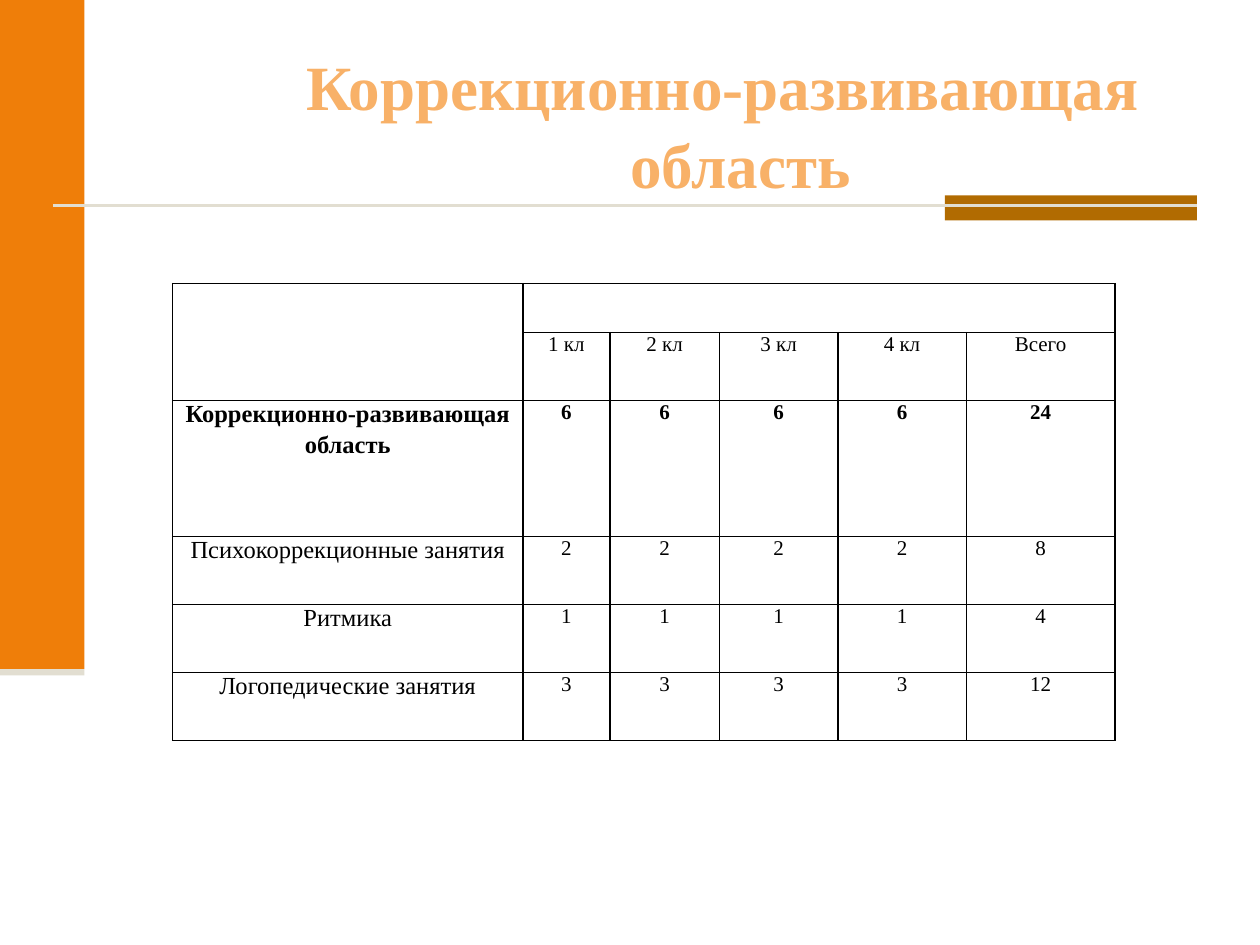
from dataclasses import dataclass

from lxml import etree
from pptx import Presentation
from pptx import util as u
from pptx.dml.color import RGBColor
from pptx.enum import shapes, text
from pptx.oxml import ns


@dataclass(frozen=True)
class Theme:
    font: str = "Times New Roman"
    orange: str = "EF7E09"
    brown: str = "B16B01"
    sand: str = "E2DED1"
    peach: str = "F8B168"
    ink: str = "000000"
    head: float = 36
    label: float = 14
    value: float = 12


THEME = Theme()
COLS = [2.78, 0.69, 0.87, 0.94, 1.02, 1.18]
ROWS = [0.39, 0.54, 1.08, 0.54, 0.54, 0.54]
HEADS = ["1 кл", "2 кл", "3 кл", "4 кл", "Всего"]
HOURS = [
    (["Коррекционно-развивающая", "область"], [6, 6, 6, 6, 24]),
    (["Психокоррекционные занятия"], [2, 2, 2, 2, 8]),
    (["Ритмика"], [1, 1, 1, 1, 4]),
    (["Логопедические занятия"], [3, 3, 3, 3, 12]),
]


def color(name):
    return RGBColor.from_string(name)


def add_run(para, words, size, tint, bold=False):
    run = para.add_run()
    run.text = words
    font = run.font
    font.name, font.size, font.bold = THEME.font, u.Pt(size), bold
    font.color.rgb = color(tint)


def add_bar(slide, box, tint):
    bar = slide.shapes.add_shape(
        shapes.MSO_SHAPE.RECTANGLE, *map(u.Inches, box))
    bar.shadow.inherit = False
    bar.fill.solid()
    bar.fill.fore_color.rgb = color(tint)
    bar.line.fill.background()


def add_side(slide, box):
    """Orange side band with a thin sand foot."""
    left, top, width, height = box
    foot = 0.05
    add_bar(slide, (left, top, width, height - foot), THEME.orange)
    add_bar(slide, (left, top + height - foot, width, foot), THEME.sand)


def add_rule(slide, box):
    """Brown block at the right end, crossed by a sand line."""
    left, top, width, height = box
    block = 2
    add_bar(slide, (left + width - block, top, block, height), THEME.brown)
    y = u.Inches(top + 0.08)
    line = slide.shapes.add_connector(
        shapes.MSO_CONNECTOR.STRAIGHT,
        u.Inches(left), y, u.Inches(left + width), y)
    line.line.color.rgb = color(THEME.sand)
    line.line.width = u.Pt(1.5)
    etree.SubElement(line._element.spPr, ns.qn("a:effectLst"))


def add_title(slide, box):
    title = slide.shapes.title
    title.left, title.top, title.width, title.height = map(u.Inches, box)
    frame = title.text_frame
    frame.word_wrap = True
    frame.auto_size = text.MSO_AUTO_SIZE.NONE
    frame.vertical_anchor = text.MSO_ANCHOR.TOP
    frame.margin_left = frame.margin_right = frame.margin_bottom = 0
    frame.margin_top = u.Inches(0.04)
    para = frame.paragraphs[0]
    para.alignment = text.PP_ALIGN.LEFT
    para.line_spacing = 1.04
    props = para._p.get_or_add_pPr()
    props.set("marL", str(u.Inches(2.58)))
    props.set("indent", str(u.Inches(-2.57)))
    add_run(para, "Коррекционно-развивающая область",
            THEME.head, THEME.peach, True)


def style_cell(cell):
    """No fill, no margins and a thin line on all four sides."""
    cell.margin_left = cell.margin_right = 0
    cell.margin_top = cell.margin_bottom = 0
    cell.fill.background()
    props = cell._tc.get_or_add_tcPr()
    for i, side in enumerate(("lnL", "lnR", "lnT", "lnB")):
        edge = etree.Element(ns.qn("a:" + side), w=str(u.Pt(1)))
        fill = etree.SubElement(edge, ns.qn("a:solidFill"))
        etree.SubElement(fill, ns.qn("a:srgbClr"), val=THEME.ink)
        props.insert(i, edge)


def fill_cell(cell, lines, size, bold=False):
    frame = cell.text_frame
    for i, words in enumerate(lines):
        para = frame.add_paragraph() if i else frame.paragraphs[0]
        para.alignment = text.PP_ALIGN.CENTER
        para.space_before = u.Pt(2.5 if i else 0.1)
        add_run(para, words, size, THEME.ink, bold)


def add_hours(slide, box):
    """Table of weekly hours by class."""
    frame = slide.shapes.add_table(
        len(ROWS), len(COLS), *map(u.Inches, box))
    table = frame.table
    table.first_row = table.horz_banding = False
    for col, width in zip(table.columns, COLS):
        col.width = u.Inches(width)
    for row, height in zip(table.rows, ROWS):
        row.height = u.Inches(height)
    for cell in table.iter_cells():
        style_cell(cell)
    table.cell(0, 0).merge(table.cell(1, 0))
    table.cell(0, 1).merge(table.cell(0, len(COLS) - 1))
    for c, head in enumerate(HEADS, 1):
        fill_cell(table.cell(1, c), [head], THEME.value)
    for r, (label, counts) in enumerate(HOURS, 2):
        bold = r == 2
        fill_cell(table.cell(r, 0), label, THEME.label, bold)
        for c, count in enumerate(counts, 1):
            fill_cell(table.cell(r, c), [str(count)], THEME.value, bold)


def main():
    deck = Presentation()
    deck.slide_width, deck.slide_height = u.Inches(10), u.Inches(7.5)
    slide = deck.slides.add_slide(deck.slide_layouts[5])
    add_side(slide, (0, 0, 0.67, 5.36))
    add_rule(slide, (0.42, 1.55, 9.08, 0.2))
    add_hours(slide, (1.37, 2.25, sum(COLS), sum(ROWS)))
    add_title(slide, (2.42, 0.31, 6.66, 1.21))
    deck.save("out.pptx")


if __name__ == "__main__":
    main()
